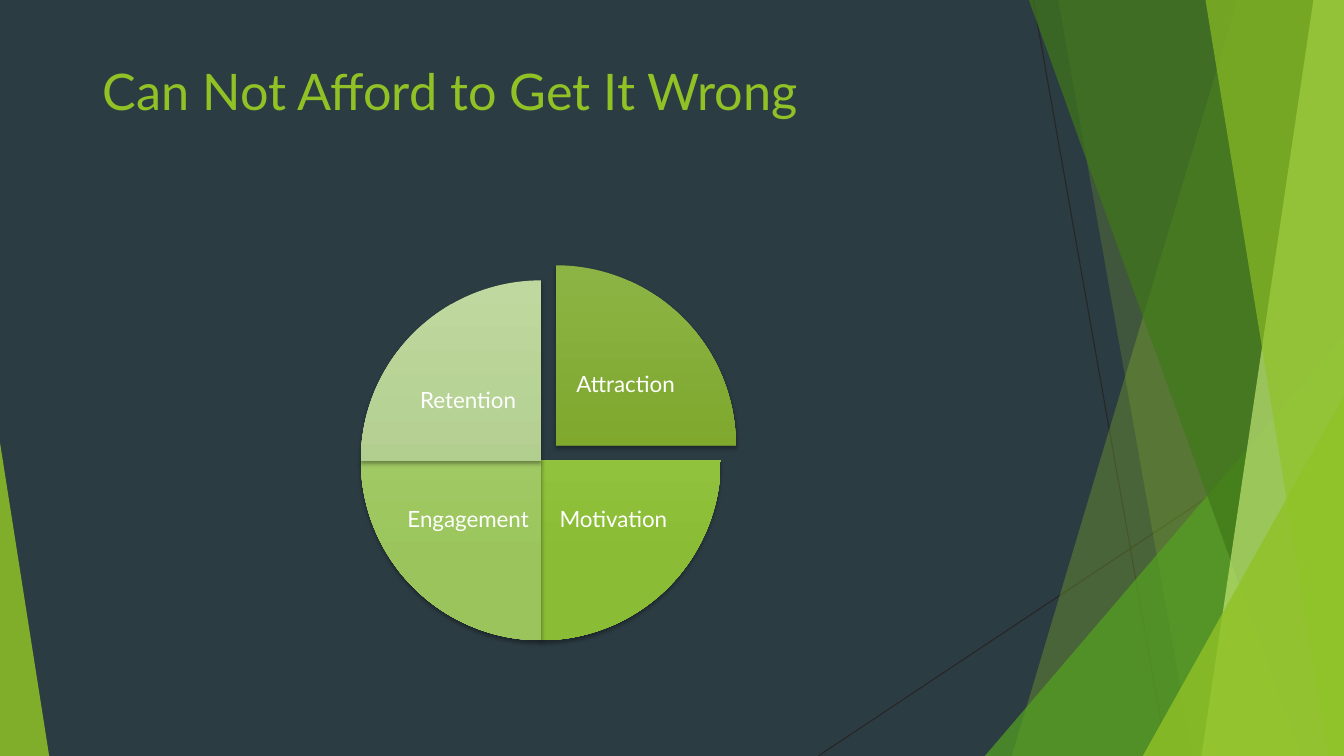
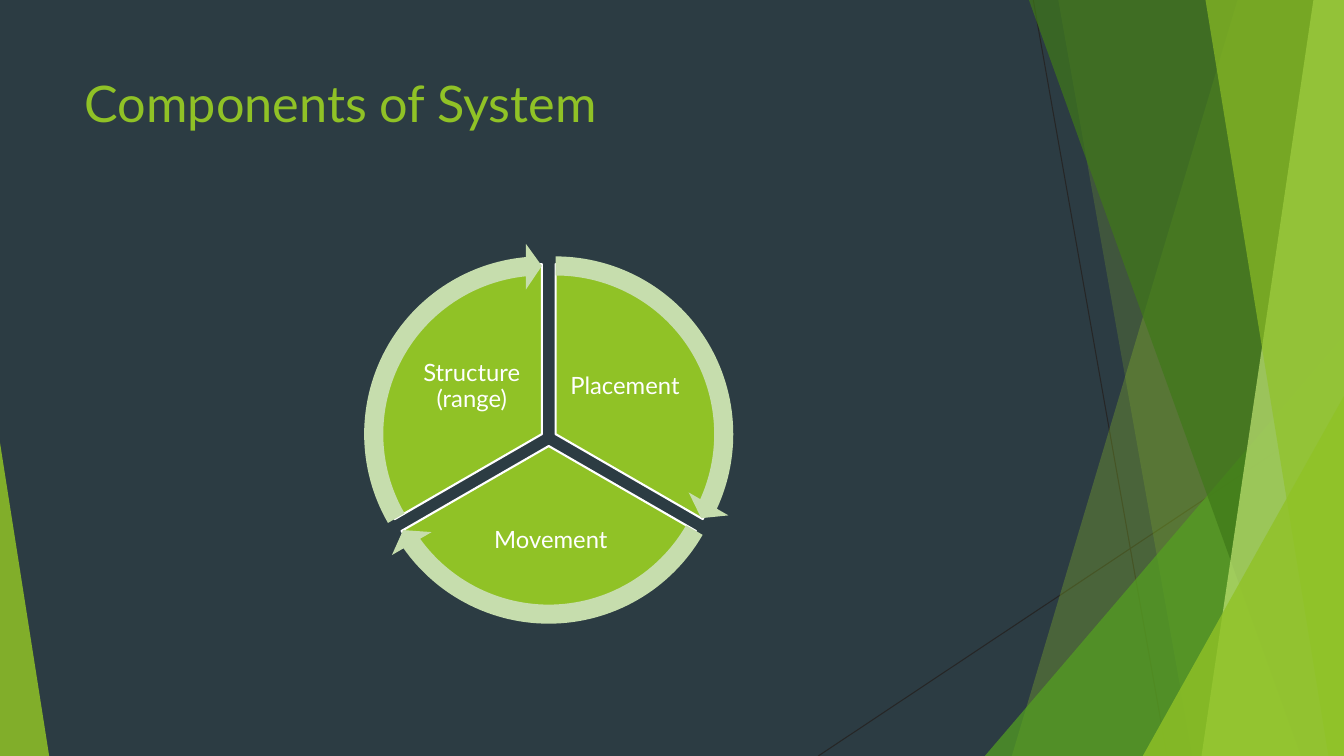
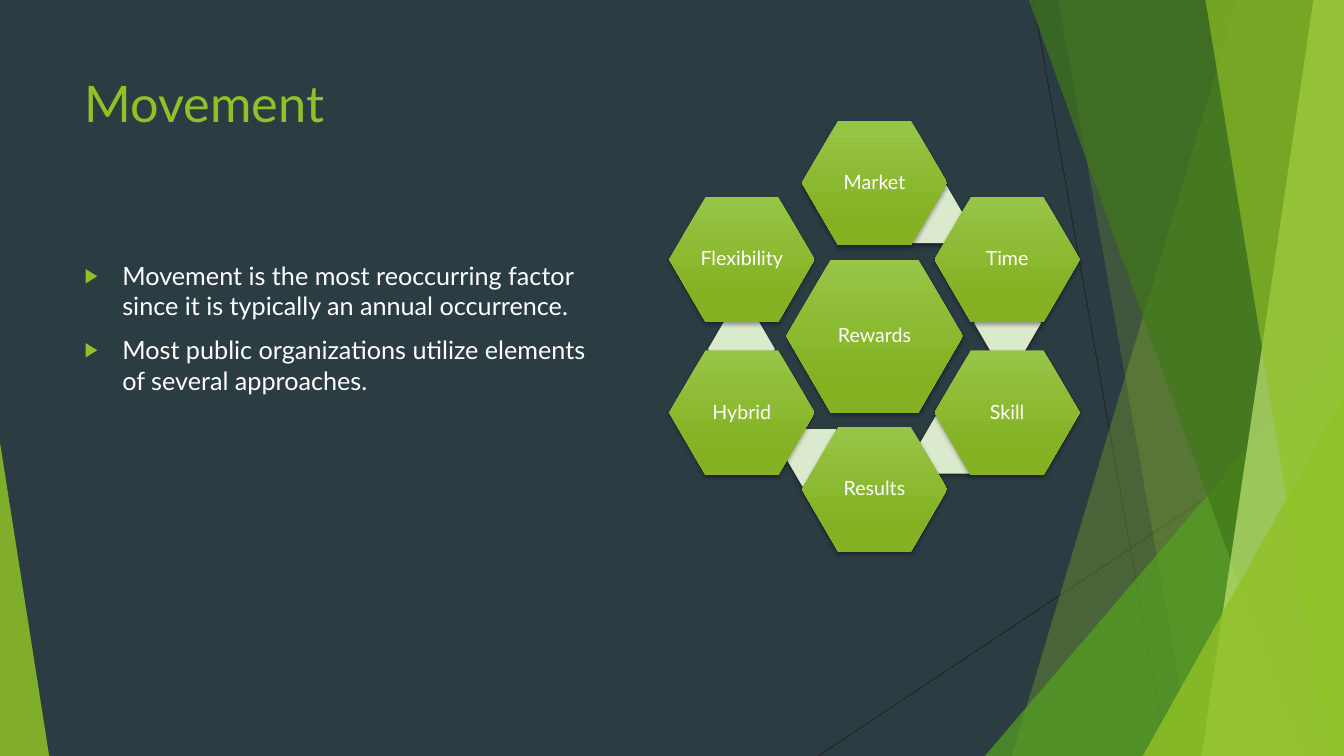
from math import cos, radians, sin

from lxml.etree import SubElement
from pptx import Presentation
from pptx.dml.color import RGBColor
from pptx.enum.shapes import MSO_CONNECTOR, MSO_SHAPE
from pptx.enum.text import MSO_ANCHOR, MSO_AUTO_SIZE, PP_ALIGN
from pptx.oxml.ns import qn
from pptx.util import Cm, Pt

WIDTH, HEIGHT = 33.87, 19.05
FONT = "Lato"
NAVY, WHITE, INK = "2C3C43", "FFFFFF", "262626"
LIME, GREEN, FOREST, PALE_LIME = "90C226", "54A021", "3F7819", "C0E474"
ARROW_GREEN, LINK_GREEN = "C6DDAD", "DBE9CD"
HEXAGON_GRADIENT = ("97C547", "84B223")
TITLE_ONLY, TITLE_AND_CONTENT = 5, 1
FULL_TURN = 216


def rgb(value):
    """Return the colour for a hex string."""
    return RGBColor.from_string(value)


def around(center, radius, angle):
    """Return the point at a radius and a clockwise angle from a centre."""
    turn = radians(angle)
    return center[0] + radius * cos(turn), center[1] + radius * sin(turn)


class Deck:
    """Hold the shared style and the current slide."""

    def __init__(self):
        """Set the slide size and the background."""
        self.presentation = Presentation()
        self.presentation.slide_width = Cm(WIDTH)
        self.presentation.slide_height = Cm(HEIGHT)
        self.master = self.presentation.slide_master
        background = self.master.background.fill
        background.solid()
        background.fore_color.rgb = rgb(NAVY)
        self.slide = None

    def start(self, layout, title, left=1.88, top=1.7, width=23.88):
        """Add a slide with its title and, the first time, the master artwork."""
        layouts = self.presentation.slide_layouts
        self.slide = self.presentation.slides.add_slide(layouts[layout])
        if len(self.presentation.slides) == 1:
            self.decorate_master()
        shape = self.slide.shapes.title
        self.place(shape, left, top, width, 3.66)
        frame = shape.text_frame
        frame.text = title
        frame.vertical_anchor = MSO_ANCHOR.TOP
        frame.auto_size = MSO_AUTO_SIZE.NONE
        frame.paragraphs[0].alignment = PP_ALIGN.LEFT
        self.format_runs(frame.paragraphs[0], 36, LIME)

    def decorate_master(self):
        """Draw the faceted edges and move them to the slide master."""
        artwork = [
            self.line((26.04, 0), (29.41, HEIGHT)),
            self.line((WIDTH, 10.24), (20.62, HEIGHT)),
            self.facet(31.19, 25.5, LIME, 30),
            self.facet(26.67, 30.05, LIME, 20),
            self.triangle(24.82, 8.46, 9.05, 1, GREEN, 72),
            self.facet(25.93, 32.79, FOREST, 70),
            self.facet(33.1, 30.28, PALE_LIME, 70),
            self.facet(30.38, 33.48, LIME, 65),
            self.triangle(28.8, 9.98, 5.07, 1, LIME, 80),
            self.triangle(0, 11.15, 1.24, 0, LIME, 85),
        ]
        tree = self.master.shapes.element
        for index, shape in enumerate(artwork):
            shape.element.find(".//" + qn("p:cNvPr")).set("id", str(100 + index))
            tree.insert(2 + index, shape.element)

    def line(self, start, end):
        """Draw a thin straight line."""
        points = [Cm(value) for value in (*start, *end)]
        connector = self.slide.shapes.add_connector(MSO_CONNECTOR.STRAIGHT, *points)
        connector.line.color.rgb = rgb(INK)
        connector.line.width = Pt(0.75)
        SubElement(connector.element.spPr, qn("a:effectLst"))
        return connector

    def facet(self, top_x, bottom_x, color, opacity):
        """Draw a full-height facet that reaches the right edge."""
        corners = [(WIDTH, 0), (WIDTH, HEIGHT), (bottom_x, HEIGHT)]
        builder = self.slide.shapes.build_freeform(Cm(top_x), 0)
        builder.add_line_segments([(Cm(x), Cm(y)) for x, y in corners], close=True)
        return self.paint(builder.convert_to_shape(), color, opacity)

    def triangle(self, left, top, width, apex, color, opacity):
        """Draw a triangle that stands on the bottom edge."""
        shape = self.slide.shapes.add_shape(
            MSO_SHAPE.ISOSCELES_TRIANGLE, Cm(left), Cm(top), Cm(width), Cm(HEIGHT - top))
        shape.adjustments[0] = apex
        return self.paint(shape, color, opacity)

    def centered(self, kind, center, width, height, adjustments=()):
        """Add a preset shape around a centre."""
        shape = self.slide.shapes.add_shape(
            kind, Cm(center[0] - width / 2), Cm(center[1] - height / 2), Cm(width), Cm(height))
        for index, value in enumerate(adjustments):
            shape.adjustments[index] = value
        return shape

    def label(self, center, width, height, text, size):
        """Add a text box around a centre."""
        shape = self.slide.shapes.add_textbox(
            Cm(center[0] - width / 2), Cm(center[1] - height / 2), Cm(width), Cm(height))
        self.put_text(shape, text, size)

    def put_text(self, shape, text, size):
        """Put centred white text in a shape."""
        frame = shape.text_frame
        frame.text = text
        frame.word_wrap = True
        frame.vertical_anchor = MSO_ANCHOR.MIDDLE
        frame.margin_left = frame.margin_right = Cm(0.05)
        frame.margin_top = frame.margin_bottom = Cm(0.05)
        paragraph = frame.paragraphs[0]
        paragraph.alignment = PP_ALIGN.CENTER
        paragraph.line_spacing = 0.9
        self.format_runs(paragraph, size, WHITE)

    def bullets(self, left, top, width, height, items):
        """Fill the body placeholder with a bulleted list."""
        shape = self.slide.placeholders[1]
        self.place(shape, left, top, width, height)
        frame = shape.text_frame
        frame.text = "\n".join(items)
        frame.auto_size = MSO_AUTO_SIZE.NONE
        for paragraph in frame.paragraphs:
            paragraph.space_before = Pt(10)
            self.format_runs(paragraph, 18, WHITE)
        for properties in shape.element.iter(qn("a:pPr")):
            properties.set("marL", str(Cm(0.95)))
            properties.set("indent", str(-Cm(0.95)))
            color = SubElement(properties, qn("a:buClr"))
            SubElement(color, qn("a:srgbClr"), val=LIME)
            SubElement(properties, qn("a:buSzPct"), val="80000")
            SubElement(properties, qn("a:buChar"), char="▶")

    def paint(self, shape, color, opacity=100, outline=None):
        """Give a shape a plain fill and an optional outline."""
        shape.shadow.inherit = False
        shape.fill.solid()
        shape.fill.fore_color.rgb = rgb(color)
        if opacity < 100:
            fill_color = shape.element.spPr.find(".//" + qn("a:srgbClr"))
            SubElement(fill_color, qn("a:alpha"), val=str(opacity * 1000))
        if outline:
            shape.line.color.rgb = rgb(outline)
            shape.line.width = Pt(1.5)
        else:
            shape.line.fill.background()
        return shape

    def shade(self, shape, colors):
        """Give a shape a vertical gradient and a soft shadow."""
        shape.fill.gradient()
        shape.fill.gradient_angle = 270
        for stop, color, position in zip(shape.fill.gradient_stops, colors, (0, 0.78)):
            stop.color.rgb = rgb(color)
            stop.position = position
        shape.line.fill.background()
        self.cast_shadow(shape)

    def cast_shadow(self, shape):
        """Add a soft shadow below a shape."""
        shape.shadow.inherit = False
        effects = shape.element.spPr.find(qn("a:effectLst"))
        shadow = SubElement(effects, qn("a:outerShdw"), blurRad=str(Pt(3)),
                            dist=str(Pt(2)), dir="5400000", rotWithShape="0")
        color = SubElement(shadow, qn("a:srgbClr"), val="000000")
        SubElement(color, qn("a:alpha"), val="35000")

    def place(self, shape, left, top, width, height):
        """Move and size a placeholder."""
        shape.left, shape.top = Cm(left), Cm(top)
        shape.width, shape.height = Cm(width), Cm(height)

    def format_runs(self, paragraph, size, color):
        """Set the font of every run."""
        for run in paragraph.runs:
            run.font.name = FONT
            run.font.size = Pt(size)
            run.font.color.rgb = rgb(color)


def build_quadrants(deck):
    """Build the pie with one quarter pulled out."""
    deck.start(TITLE_ONLY, "Can Not Afford to Get It Wrong", 2.34, 1.4, 29.21)
    quarters = [
        ("Attraction ", 1, -1, 0.38, ("8BB445", "78A120")),
        ("Motivation", 1, 1, 0, ("9ECF51", "8BBC35")),
        ("Engagement", -1, 1, 0, ("ACD277", "9BC55C")),
        ("Retention", -1, -1, 0, ("BFD89F", "ACCA87")),
    ]
    for index, (text, side_x, side_y, shift, colors) in enumerate(quarters):
        x, y = 13.63 + side_x * shift, 11.6 + side_y * shift
        start = (162 + 54 * index) % FULL_TURN
        pie = deck.centered(MSO_SHAPE.PIE, (x, y), 9.07, 9.07,
                            (start, (start + 54) % FULL_TURN))
        deck.shade(pie, colors)
        deck.label((x + side_x * 1.83, y + side_y * 1.5), 3.35, 2.69, text, 16)


def build_cycle(deck):
    """Build the three sectors with arrows around them."""
    deck.start(TITLE_ONLY, "Components of System")
    sectors = [
        ("Placement", (15.75, 9.75)),
        ("Movement", (13.88, 13.64)),
        ("Structure (range)", (11.89, 9.75)),
    ]
    arrows = []
    for index, (text, label_center) in enumerate(sectors):
        center = around((13.83, 11.04), 0.2, -30 + 120 * index)
        start, end = (162 + 72 * index) % FULL_TURN, 18 + 72 * index
        pie = deck.centered(MSO_SHAPE.PIE, center, 8.56, 8.56, (start, end))
        deck.paint(pie, LIME, outline=WHITE)
        deck.label(label_center, 3.05, 2.54, text, 17)
        arrows.append((center, (0.05, 3.28, end - 3.28, start, 0.06)))
    for center, adjustments in arrows:
        arrow = deck.centered(MSO_SHAPE.CIRCULAR_ARROW, center, 9.63, 9.63, adjustments)
        deck.paint(arrow, ARROW_GREEN)


def build_hexagons(deck):
    """Build the list and the ring of hexagons."""
    deck.start(TITLE_AND_CONTENT, "Movement")
    center = (22.04, 8.47)
    ring = ["Market", "Time", "Skill", "Results", "Hybrid", "Flexibility"]

    def hexagon(position, width, height, text):
        """Draw one labelled hexagon."""
        shape = deck.centered(MSO_SHAPE.HEXAGON, position, width, height, (0.29, 1.15))
        deck.shade(shape, HEXAGON_GRADIENT)
        deck.put_text(shape, text, 14)

    hexagon(center, 4.45, 3.86, "Rewards")
    for index, text in enumerate(ring):
        if index < len(ring) - 1:
            link_center = around(center, 3.37, -65.5 + 60 * index)
            link = deck.centered(MSO_SHAPE.HEXAGON, link_center, 1.68, 1.45, (0.29, 1.15))
            deck.paint(link, LINK_GREEN)
            deck.cast_shadow(link)
        hexagon(around(center, 3.86, -90 + 60 * index), 3.66, 3.15, text)
    deck.bullets(1.88, 6.43, 13.67, 3.68, [
        "Movement is the most reoccurring factor since it is typically an annual occurrence.",
        "Most public organizations utilize elements of several approaches.",
    ])


def main():
    """Build and save the presentation."""
    deck = Deck()
    build_quadrants(deck)
    build_cycle(deck)
    build_hexagons(deck)
    deck.presentation.save("out.pptx")


if __name__ == "__main__":
    main()
